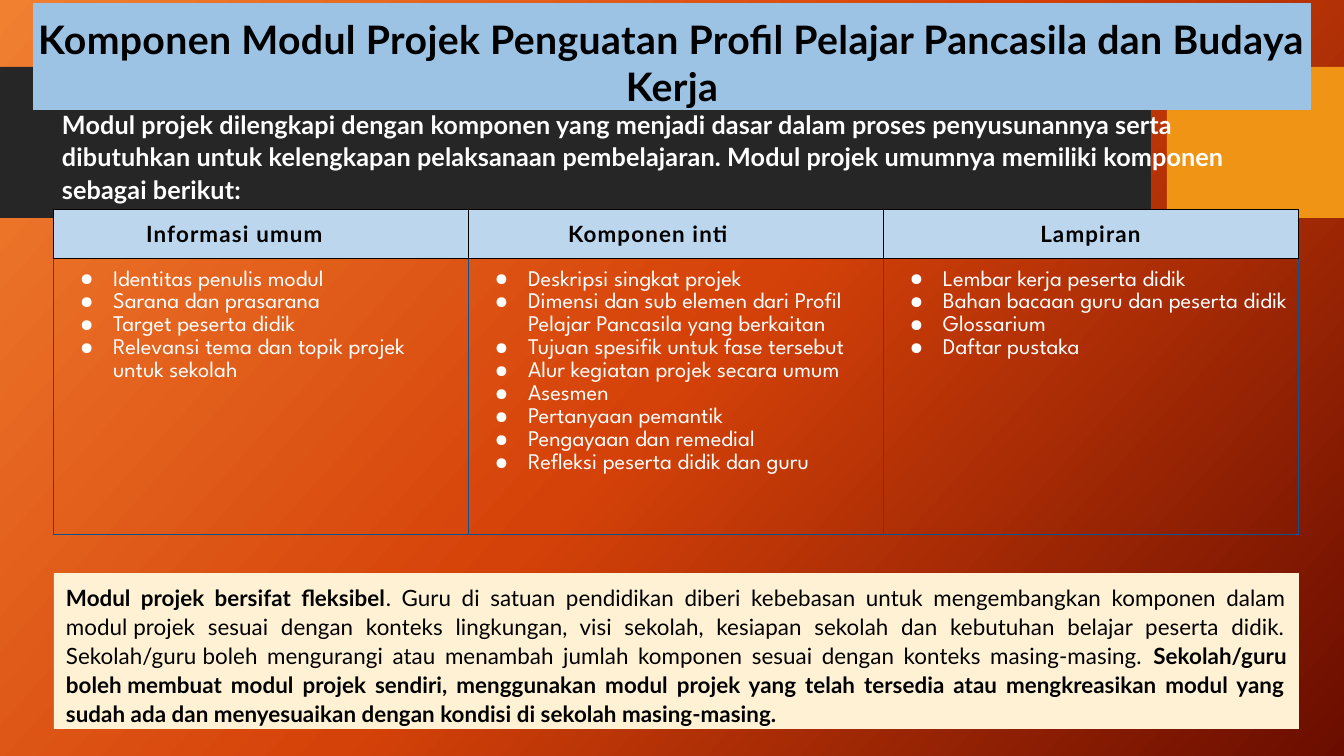
import dataclasses

import lxml.etree
import pptx
import pptx.dml.color
import pptx.enum.shapes
import pptx.enum.text
import pptx.oxml.ns
import pptx.util

ALIGN = pptx.enum.text.PP_ALIGN
ANCHOR = pptx.enum.text.MSO_ANCHOR
SCALE = 12192000 / 1344


@dataclasses.dataclass(frozen=True)
class Theme:
    backdrop: tuple = ((0, "F18031"), (50, "D54209"), (100, "6A0D00"))
    backdrop_angle: int = 42
    dark: str = "262626"
    amber: str = "F09415"
    title_fill: str = "9CC3E4"
    header_fill: str = "BCD6ED"
    note_fill: str = "FFF2D4"
    black: str = "000000"
    white: str = "FFFFFF"
    blue: str = "0B5293"
    main_font: str = "Lato"
    list_font: str = "League Spartan"
    title_size: int = 28
    intro_size: int = 18
    text_size: int = 16
    border: float = 0.75


THEME = Theme()

TITLE = "Komponen Modul Projek Penguatan Proﬁl Pelajar Pancasila dan Budaya Kerja"
INTRO = (
    "Modul projek dilengkapi dengan komponen yang menjadi dasar dalam proses "
    "penyusunannya serta dibutuhkan untuk kelengkapan pelaksanaan pembelajaran. "
    "Modul projek umumnya memiliki komponen sebagai berikut:"
)
COMPONENTS = (
    ("Informasi umum", {"marL": 93}, ALIGN.LEFT, (
        "Identitas penulis modul",
        "Sarana dan prasarana",
        "Target peserta didik",
        "Relevansi tema dan topik projek untuk sekolah",
    )),
    ("Komponen inti", {"marL": 100}, ALIGN.LEFT, (
        "Deskripsi singkat projek",
        "Dimensi dan sub elemen dari Proﬁl Pelajar Pancasila yang berkaitan",
        "Tujuan spesiﬁk untuk fase tersebut",
        "Alur kegiatan projek secara umum",
        "Asesmen",
        "Pertanyaan pemantik",
        "Pengayaan dan remedial",
        "Reﬂeksi peserta didik dan guru",
    )),
    ("Lampiran", {}, ALIGN.CENTER, (
        "Lembar kerja peserta didik",
        "Bahan bacaan guru dan peserta didik",
        "Glossarium",
        "Daftar pustaka",
    )),
)
NOTE = (
    ("Modul projek bersifat ﬂeksibel", True),
    (". Guru di satuan pendidikan diberi kebebasan untuk mengembangkan komponen "
     "dalam modul projek sesuai dengan konteks lingkungan, visi sekolah, kesiapan "
     "sekolah dan kebutuhan belajar peserta didik. Sekolah/guru boleh mengurangi "
     "atau menambah jumlah komponen sesuai dengan konteks masing-masing. ", False),
    ("Sekolah/guru boleh membuat modul projek sendiri, menggunakan modul projek "
     "yang telah tersedia atau mengkreasikan modul yang sudah ada dan menyesuaikan "
     "dengan kondisi di sekolah masing-masing.", True),
)
KEPT_TOGETHER = ("untuk sekolah", "modul projek sesuai",
                 "Sekolah/guru boleh mengurangi", "boleh membuat")
NO_BREAK = chr(160)


def px(length):
    return pptx.util.Emu(round(length * SCALE))


def rgb(value):
    return pptx.dml.color.RGBColor.from_string(value)


def add_element(parent, tag, **attributes):
    return lxml.etree.SubElement(parent, pptx.oxml.ns.qn(tag), attributes)


def apply_format(target, values):
    for name, value in values.items():
        setattr(target, name, value)


def font_format(size, bold=True, name=THEME.main_font):
    return {"name": name, "size": pptx.util.Pt(size), "bold": bold}


def fill_solid(item, color):
    item.fill.solid()
    item.fill.fore_color.rgb = rgb(color)


def keep_together(text):
    for phrase in KEPT_TOGETHER:
        text = text.replace(phrase, phrase.replace(" ", NO_BREAK, 1))
    return text


def write_span(para, text, font, color, tracking=0):
    span = para.add_run()
    span.text = keep_together(text)
    apply_format(span.font, font)
    span.font.color.rgb = rgb(color)
    if tracking:
        span.font._element.set("spc", str(tracking))


def set_frame(frame, top=0, side=0, anchor=ANCHOR.TOP):
    apply_format(frame, {
        "word_wrap": True,
        "auto_size": pptx.enum.text.MSO_AUTO_SIZE.NONE,
        "vertical_anchor": anchor,
        "margin_left": px(side),
        "margin_right": px(side),
        "margin_top": px(top),
        "margin_bottom": 0,
    })
    return frame.paragraphs[0]


def add_backdrop(page):
    page.background.fill.gradient()
    gradient = page._element.find(".//" + pptx.oxml.ns.qn("a:gradFill"))
    for child in list(gradient):
        gradient.remove(child)
    stops = add_element(gradient, "a:gsLst")
    for position, color in THEME.backdrop:
        stop = add_element(stops, "a:gs", pos=str(position * 1000))
        add_element(stop, "a:srgbClr", val=color)
    add_element(gradient, "a:lin", ang=str(THEME.backdrop_angle * 60000), scaled="0")


def add_band(page, left, top, width, height, color):
    band = page.shapes.add_shape(
        pptx.enum.shapes.MSO_SHAPE.RECTANGLE, px(left), px(top), px(width), px(height))
    band.shadow.inherit = False
    band.line.fill.background()
    fill_solid(band, color)
    return band


def add_intro(page):
    box = page.shapes.add_textbox(px(60), px(106), px(1229), px(101))
    para = set_frame(box.text_frame, top=2, side=2)
    para.line_spacing = 1.06
    write_span(para, INTRO, font_format(THEME.intro_size), THEME.white, 8)


def format_cell(cell, top, colors):
    apply_format(cell, {"margin_left": 0, "margin_right": 0,
                        "margin_top": px(top), "margin_bottom": 0})
    properties = cell._tc.get_or_add_tcPr()
    for side, color in zip("LRTB", colors):
        line = add_element(properties, f"a:ln{side}",
                           w=str(pptx.util.Pt(THEME.border)))
        add_element(add_element(line, "a:solidFill"), "a:srgbClr", val=color)


def write_header(cell, text, indent, align):
    format_cell(cell, 12, [THEME.black] * 4)
    fill_solid(cell, THEME.header_fill)
    para = cell.text_frame.paragraphs[0]
    para.alignment = align
    for name, value in indent.items():
        para._p.get_or_add_pPr().set(name, str(px(value)))
    write_span(para, text, font_format(THEME.text_size), THEME.black, 85)


def write_list(cell, items):
    format_cell(cell, 9, [THEME.blue, THEME.blue, THEME.black, THEME.blue])
    cell.fill.background()
    font = font_format(THEME.text_size, False, THEME.list_font)
    frame = cell.text_frame
    for index, item in enumerate(items):
        para = frame.add_paragraph() if index else frame.paragraphs[0]
        properties = para._p.get_or_add_pPr()
        properties.set("marL", str(px(60)))
        properties.set("indent", str(px(-33)))
        add_element(properties, "a:buSzPct", val="75000")
        add_element(properties, "a:buChar", char="●")
        para.line_spacing = 1.12
        write_span(para, item, font, THEME.white, 5)


def add_components(page):
    table = page.shapes.add_table(
        2, len(COMPONENTS), px(53), px(209), px(1245), px(326)).table
    apply_format(table, {"first_row": False, "horz_banding": False})
    for row, height in zip(table.rows, (50, 276)):
        row.height = px(height)
    for index, (heading, indent, align, items) in enumerate(COMPONENTS):
        table.columns[index].width = px(415)
        write_header(table.cell(0, index), heading, indent, align)
        write_list(table.cell(1, index), items)


def add_note(page):
    note = add_band(page, 54, 573, 1245, 156, THEME.note_fill)
    para = set_frame(note.text_frame, top=9, side=12)
    apply_format(para, {"alignment": ALIGN.JUSTIFY, "line_spacing": 1.08})
    for text, bold in NOTE:
        write_span(para, text, font_format(THEME.text_size, bold), THEME.black, 5)


def add_title(page):
    title = page.shapes.title
    apply_format(title, {"left": px(33), "top": px(3),
                         "width": px(1278), "height": px(107)})
    fill_solid(title, THEME.title_fill)
    para = set_frame(title.text_frame, top=12, anchor=ANCHOR.MIDDLE)
    para.alignment = ALIGN.CENTER
    write_span(para, TITLE, font_format(THEME.title_size), THEME.black, 28)
    page.shapes._spTree.append(title._element)


def main():
    deck = pptx.Presentation()
    apply_format(deck, {"slide_width": px(1344), "slide_height": px(756)})
    page = deck.slides.add_slide(deck.slide_layouts.get_by_name("Title Only"))
    add_backdrop(page)
    add_band(page, 0, 67, 1151, 151, THEME.dark)
    add_band(page, 1167, 67, 177, 151, THEME.amber)
    add_intro(page)
    add_components(page)
    add_note(page)
    add_title(page)
    deck.save("out.pptx")


if __name__ == "__main__":
    main()
